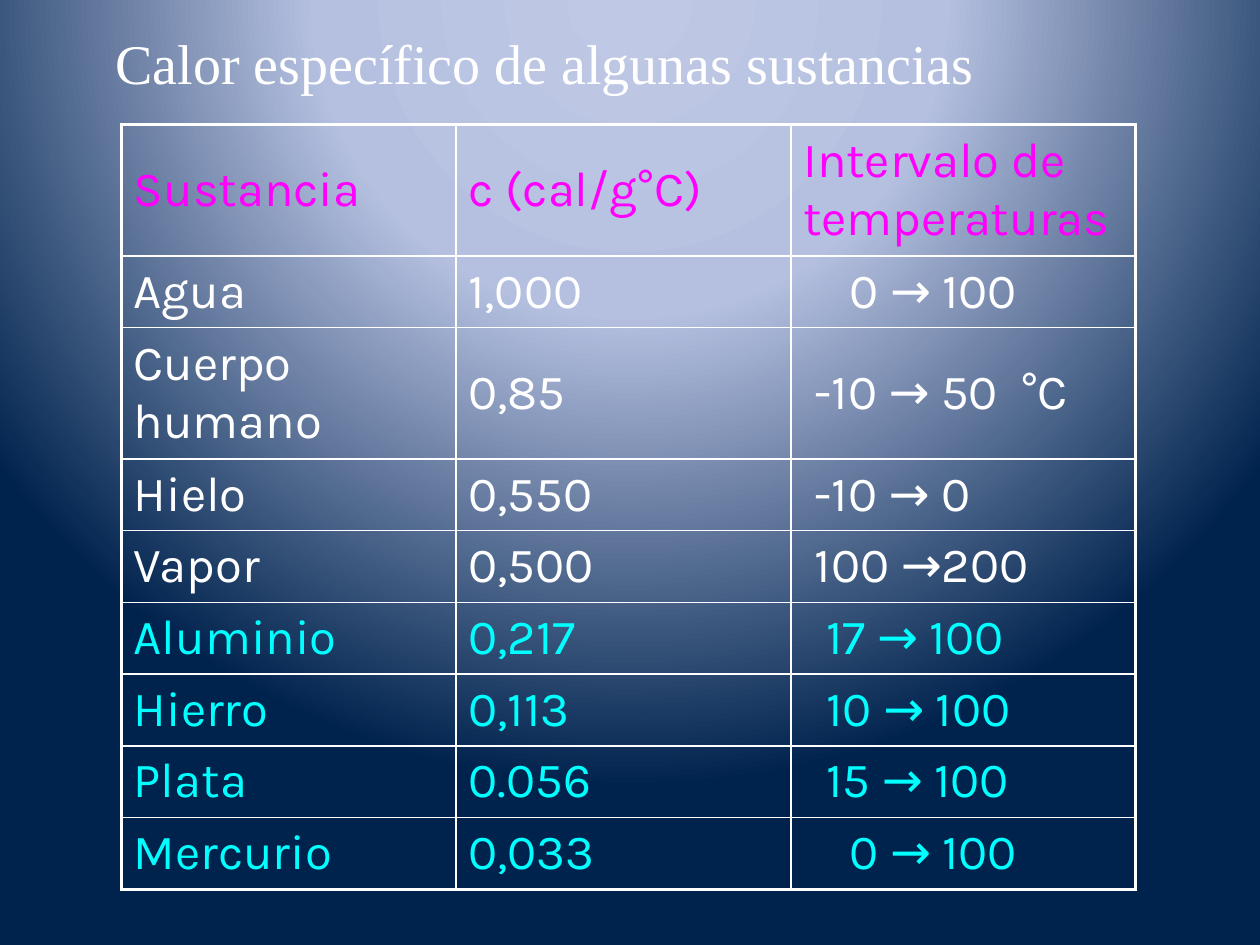
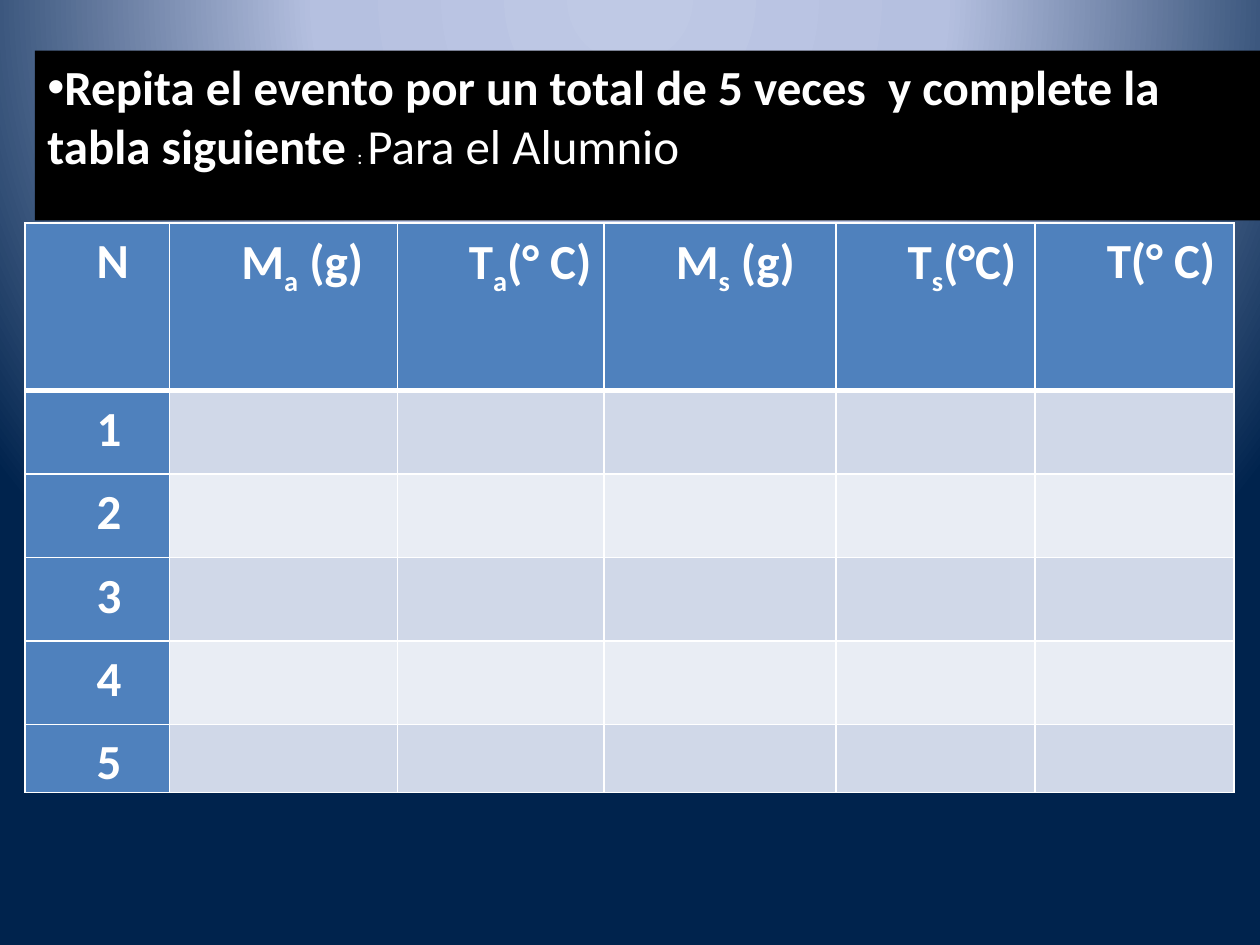
from pptx import Presentation, util as u
from pptx.dml.color import RGBColor
from pptx.enum import shapes, text
from pptx.oxml import parse_xml
from pptx.oxml.ns import nsdecls

Pt = u.Pt
COLORS = {
    "white": "FFFFFF", "black": "000000", "magenta": "FF00FF", "cyan": "00FFFF",
    "header": "4F81BD", "odd": "D0D8E8", "even": "E9EDF4",
}
BACKDROP = [(0, "BFC9E5"), (40, "B5C0E0"), (100, "00234D")]
THIN, OUTER, RULE = 1, 2.25, 3


class Deck:
    """Shared style plus the slide being filled."""

    def __init__(self):
        self.prs = Presentation()
        self.prs.slide_width, self.prs.slide_height = Pt(720), Pt(540)
        self.slide = None
        self.backdrop()

    def backdrop(self):
        stops = "".join(f'<a:gs pos="{pos * 1000}"><a:srgbClr val="{color}"/></a:gs>'
                        for pos, color in BACKDROP)
        common = self.prs.slide_master.element.cSld
        for old in common.xpath("p:bg"):
            common.remove(old)
        common.insert(0, parse_xml(
            f'<p:bg {nsdecls("p", "a")}><p:bgPr><a:gradFill rotWithShape="1">'
            f'<a:gsLst>{stops}</a:gsLst><a:path path="circle">'
            '<a:fillToRect l="50000" t="-80000" r="50000" b="180000"/></a:path>'
            '</a:gradFill><a:effectLst/></p:bgPr></p:bg>'))

    def new_slide(self):
        self.slide = self.prs.slides.add_slide(self.prs.slide_layouts[6])

    def run(self, paragraph, words, font, size=28, color="white", bold=False, baseline=0):
        run = paragraph.add_run()
        run.text = words
        run.font.name, run.font.size, run.font.bold = font, Pt(size), bold
        run.font.color.rgb = RGBColor.from_string(COLORS[color])
        if baseline:
            run.font._element.set("baseline", str(baseline * 1000))

    def title(self, words, left, top, width, height):
        frame = self.slide.shapes.add_textbox(*map(Pt, (left, top, width, height))).text_frame
        frame.word_wrap = True
        self.run(frame.paragraphs[0], words, "Times New Roman", 32)

    def banner(self, runs, left, top, width, height):
        band = self.slide.shapes.add_shape(
            shapes.MSO_SHAPE.RECTANGLE, *map(Pt, (left, top, width, height)))
        band.shadow.inherit = False
        band.fill.solid()
        band.fill.fore_color.rgb = RGBColor.from_string(COLORS["black"])
        band.line.fill.background()
        frame = band.text_frame
        frame.word_wrap = True
        frame.vertical_anchor = text.MSO_ANCHOR.TOP
        instruction = frame.paragraphs[0]
        instruction.alignment = text.PP_ALIGN.LEFT
        props = instruction._p.get_or_add_pPr()
        self.indent(instruction, 0)
        props.append(parse_xml(f'<a:buFont {nsdecls("a")} typeface="Arial"/>'))
        props.append(parse_xml(f'<a:buChar {nsdecls("a")} char="•"/>'))
        for words, style in runs:
            self.run(instruction, words, "Calibri", **style)

    def indent(self, paragraph, points):
        props = paragraph._p.get_or_add_pPr()
        props.set("marL", str(int(Pt(points))))
        props.set("indent", "0")

    def table(self, left, top, widths, heights):
        grid = self.slide.shapes.add_table(
            len(heights), len(widths),
            *map(Pt, (left, top, sum(widths), sum(heights)))).table
        grid.first_row = grid.horz_banding = False
        for column, width in zip(grid.columns, widths):
            column.width = Pt(width)
        for row, height in zip(grid.rows, heights):
            row.height = Pt(height)
        return grid

    def cell(self, cell, borders, fill=None, margins=(7.2, 3.6)):
        """Borders are widths for left, right, top and bottom."""
        cell.margin_left = cell.margin_right = Pt(margins[0])
        cell.margin_top = cell.margin_bottom = Pt(margins[1])
        for side, width in zip("LRTB", borders):
            cell._tc.get_or_add_tcPr().append(parse_xml(
                f'<a:ln{side} {nsdecls("a")} w="{int(Pt(width))}"><a:solidFill>'
                f'<a:srgbClr val="{COLORS["white"]}"/></a:solidFill></a:ln{side}>'))
        if fill:
            cell.fill.solid()
            cell.fill.fore_color.rgb = RGBColor.from_string(COLORS[fill])
        else:
            cell.fill.background()
        return cell.text_frame.paragraphs[0]


# Substance, specific heat, interval, indent of the interval in digit gaps
SUBSTANCES = [
    ("Sustancia", "c (cal/g°C)", "Intervalo de temperaturas", 0),
    ("Agua", "1,000", "0 → 100", 4),
    ("Cuerpo humano", "0,85", "-10 → 50  °C", 1),
    ("Hielo", "0,550", "-10 → 0", 1),
    ("Vapor", "0,500", "100 →200", 1),
    ("Aluminio", "0,217", "17 → 100", 2),
    ("Hierro", "0,113", "10 → 100", 2),
    ("Plata", "0.056", "15 → 100", 2),
    ("Mercurio", "0,033", "0 → 100", 4),
]
GAP = 6.6
FIRST_METAL = 5

# Symbol, subscript, unit
MEASURES = [("N", "", ""), ("M", "a", " (g)"), ("T", "a", "(° C)"),
            ("M", "s", " (g)"), ("T", "s", "(°C)"), ("T(° C)", "", "")]
TRIALS = 5


def specific_heats(deck):
    deck.new_slide()
    heights = [75 if row in (0, 2) else 41 for row in range(len(SUBSTANCES))]
    grid = deck.table(69.3, 71.3, [191.3, 191.3, 197], heights)
    last = len(SUBSTANCES) - 1
    for row, (*entries, gaps) in enumerate(SUBSTANCES):
        color = "magenta" if row == 0 else "white" if row < FIRST_METAL else "cyan"
        for col, words in enumerate(entries):
            edges = (col == 0, col == 2, row == 0, row == last)
            cell = grid.cell(row, col)
            paragraph = deck.cell(cell, [OUTER if edge else THIN for edge in edges])
            cell.vertical_anchor = text.MSO_ANCHOR.MIDDLE
            if col == 2:
                deck.indent(paragraph, gaps * GAP)
            deck.run(paragraph, words, "Karla", color=color)
    deck.title("Calor específico de algunas sustancias", 59, 13, 592, 45)


def trial_record(deck):
    deck.new_slide()
    grid = deck.table(14.2, 127.4, [82.8, 130, 118.2, 132.5, 113.8, 113.8],
                      [95.8] + [47.7] * (TRIALS - 1) + [39])
    for row in range(TRIALS + 1):
        for col, measure in enumerate(MEASURES):
            shade = "header" if 0 in (row, col) else "odd" if row % 2 else "even"
            borders = [THIN, THIN, RULE if row == 1 else THIN, RULE if row == 0 else THIN]
            paragraph = deck.cell(grid.cell(row, col), borders, shade, (5, 0))
            if shade != "header":
                continue
            deck.indent(paragraph, 36)
            paragraph.line_spacing = 1.15
            label = measure if row == 0 else (str(row), "", "")
            for words, baseline in zip(label, (0, -25, 0)):
                if words:
                    deck.run(paragraph, words, "Calibri", bold=True, baseline=baseline)
    deck.banner([
        ("Repita el evento por un total de 5 veces  y complete la tabla siguiente ",
         {"bold": True}),
        (": ", {"size": 12}),
        ("Para el Alumnio", {}),
    ], 20, 29, 700, 97)


def main():
    deck = Deck()
    specific_heats(deck)
    trial_record(deck)
    deck.prs.save("out.pptx")


if __name__ == "__main__":
    main()
